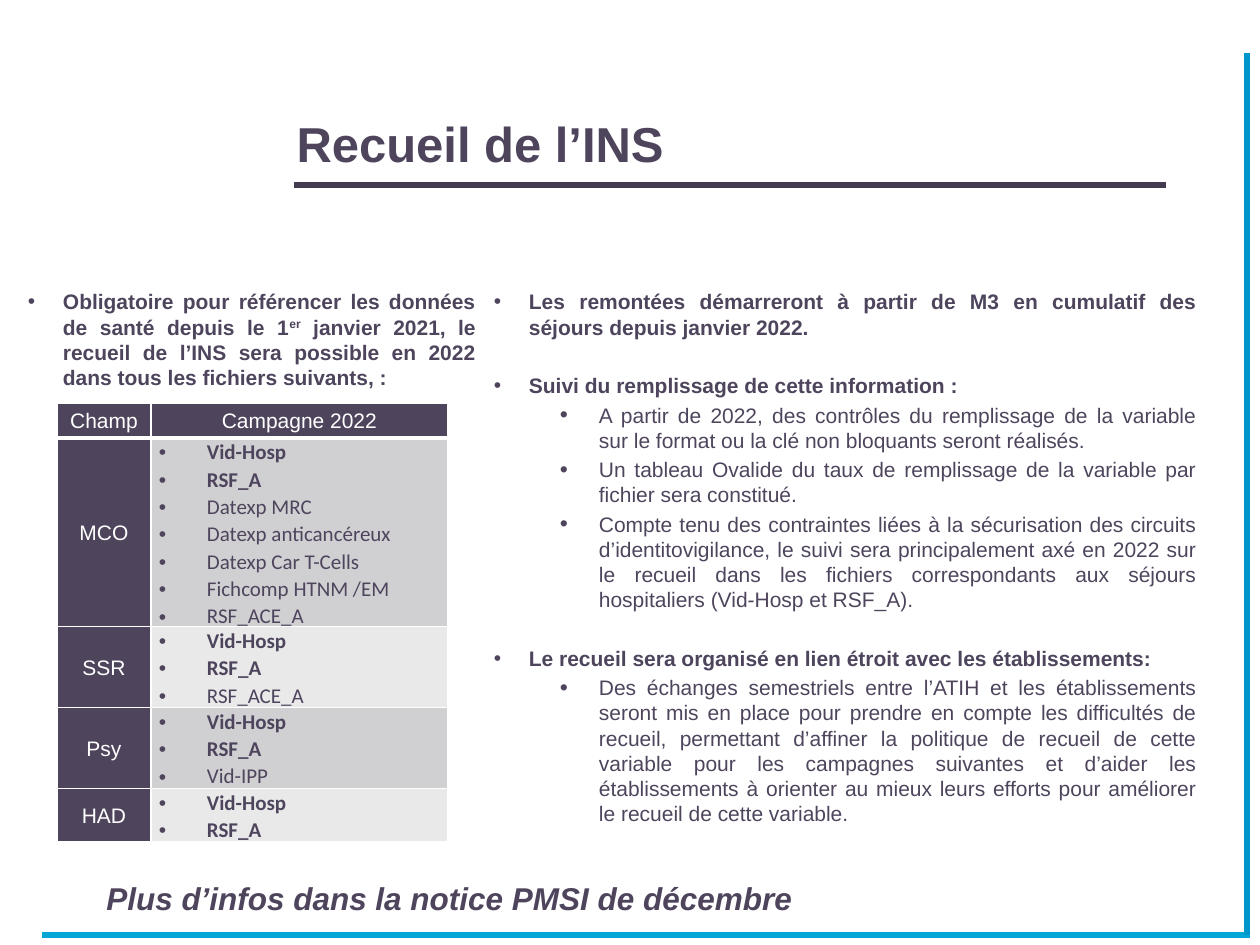
from lxml import etree
from pptx import Presentation
from pptx.dml.color import RGBColor
from pptx.enum.shapes import MSO_CONNECTOR
from pptx.enum.text import MSO_ANCHOR, MSO_AUTO_SIZE, PP_ALIGN
from pptx.oxml.ns import qn
from pptx.util import Emu, Pt

STRAIGHT = MSO_CONNECTOR.STRAIGHT
MIDDLE, BOTTOM = MSO_ANCHOR.MIDDLE, MSO_ANCHOR.BOTTOM
FIT_SHAPE = MSO_AUTO_SIZE.SHAPE_TO_FIT_TEXT
LEFT, CENTER, JUSTIFY = PP_ALIGN.LEFT, PP_ALIGN.CENTER, PP_ALIGN.JUSTIFY
TITLE_ONLY = 5
COLORS = {
    "ink": "4E455D", "rule": "453B50", "cyan": "02A7D5", "blue": "0095CB",
    "white": "FFFFFF", "band": "D0CFD2", "pale": "E9E9EA",
}
FILES_BY_FIELD = [
    ("MCO", 164, ["Datexp MRC", "Datexp anticancéreux", "Datexp Car T-Cells",
                  "Fichcomp HTNM /EM", "RSF_ACE_A"]),
    ("SSR", 73, ["RSF_ACE_A"]),
    ("Psy", 73, ["Vid-IPP"]),
    ("HAD", 45, []),
]
COMMON_FILES = ["Vid-Hosp", "RSF_A"]
OBLIGATION = [
    "Obligatoire pour référencer les données de santé depuis le 1", "er",
    " janvier 2021, le recueil de l’INS sera possible en 2022 dans tous les fichiers suivants, :",
]
SECTIONS = [
    ("Les remontées démarreront à partir de M3 en cumulatif des séjours depuis janvier 2022.", []),
    ("Suivi du remplissage de cette information :", [
        "A partir de 2022, des contrôles du remplissage de la variable sur le format ou la clé "
        "non bloquants seront réalisés.",
        "Un tableau Ovalide du taux de remplissage de la variable par fichier sera constitué.",
        "Compte tenu des contraintes liées à la sécurisation des circuits d’identitovigilance, "
        "le suivi sera principalement axé en 2022 sur le recueil dans les fichiers "
        "correspondants aux séjours hospitaliers (Vid-Hosp et RSF_A).",
    ]),
    ("Le recueil sera organisé en lien étroit avec les établissements:", [
        "Des échanges semestriels entre l’ATIH et les établissements seront mis en place pour "
        "prendre en compte les difficultés de recueil, permettant d’affiner la politique de "
        "recueil de cette variable pour les campagnes suivantes et d’aider les établissements "
        "à orienter au mieux leurs efforts pour améliorer le recueil de cette variable.",
    ]),
]


def px(length):
    """Turn pixels at 126 to the inch into EMU."""
    return Emu(round(length * 914400 / 126))


def format_runs(paragraph, size=12, color="ink", bold=False, italic=False, name="Arial"):
    """Give every run of a paragraph the same font."""
    for run in paragraph.runs:
        font = run.font
        font.name, font.size, font.bold, font.italic = name, Pt(size), bold, italic
        font.color.rgb = RGBColor.from_string(COLORS[color])


def add_bullet(paragraph, margin, hanging, percent=100):
    """Put a round bullet before a paragraph with a hanging indent."""
    properties = paragraph._p.get_or_add_pPr()
    properties.set("marL", str(px(margin)))
    properties.set("indent", str(-px(hanging)))
    for tag, key, value in (("a:buSzPct", "val", str(percent * 1000)),
                            ("a:buFont", "typeface", "Arial"),
                            ("a:buChar", "char", "•")):
        etree.SubElement(properties, qn(tag)).set(key, value)


def add_rule(slide, start, end, color):
    """Draw a straight line between two points."""
    line = slide.shapes.add_connector(STRAIGHT, *map(px, start + end))
    line.line.color.rgb = RGBColor.from_string(COLORS[color])
    line.line.width = Pt(3.06)
    etree.SubElement(line._element.spPr, qn("a:effectLst"))


def add_text_column(slide, box):
    """Add a wrapping text box with narrow insets and return its text frame."""
    frame = slide.shapes.add_textbox(*map(px, box)).text_frame
    frame.word_wrap = True
    frame.margin_left = frame.margin_right = px(9)
    frame.margin_top = frame.margin_bottom = px(5)
    return frame


def add_title(slide, box):
    """Place and format the title placeholder."""
    title = slide.shapes.title
    title.left, title.top, title.width, title.height = map(px, box)
    frame = title.text_frame
    frame.text = "Recueil de l’INS"
    frame.vertical_anchor = BOTTOM
    frame.paragraphs[0].alignment = LEFT
    format_runs(frame.paragraphs[0], size=28, bold=True)


def add_obligation(slide, box):
    """Write the introduction above the table, with its superscript."""
    paragraph = add_text_column(slide, box).paragraphs[0]
    paragraph.alignment = JUSTIFY
    add_bullet(paragraph, 35, 35)
    for text in OBLIGATION:
        paragraph.add_run().text = text
    format_runs(paragraph, bold=True)
    paragraph.runs[1]._r.get_or_add_rPr().set("baseline", "30000")


def add_sections(slide, box):
    """Write the bold points and their details."""
    frame = add_text_column(slide, box)
    for index, (heading, details) in enumerate(SECTIONS):
        for level, text in [(0, heading)] + [(1, detail) for detail in details]:
            first = index == 0 and level == 0
            paragraph = frame.paragraphs[0] if first else frame.add_paragraph()
            paragraph.text = text
            paragraph.level = level
            paragraph.alignment = JUSTIFY
            if level:
                add_bullet(paragraph, 105, 39, 110)
            else:
                add_bullet(paragraph, 35, 35)
            if not first:
                paragraph.space_before = Pt(2.4 if level else 19)
            format_runs(paragraph, bold=level == 0)


def style_cell(cell, fill, bottom=1):
    """Set the borders, fill and insets of a table cell."""
    properties = cell._tc.get_or_add_tcPr()
    for side, width in (("L", 1), ("R", 1), ("T", 1), ("B", bottom)):
        border = etree.SubElement(properties, qn(f"a:ln{side}"), w=str(Pt(width)))
        solid = etree.SubElement(border, qn("a:solidFill"))
        etree.SubElement(solid, qn("a:srgbClr")).set("val", COLORS["white"])
    cell.fill.solid()
    cell.fill.fore_color.rgb = RGBColor.from_string(COLORS[fill])
    cell.vertical_anchor = MIDDLE
    cell.margin_left = cell.margin_right = px(8)
    cell.margin_top = cell.margin_bottom = 0


def fill_label(cell, text, bottom=1):
    """Write a white centred label in a dark cell."""
    style_cell(cell, "ink", bottom)
    paragraph = cell.text_frame.paragraphs[0]
    paragraph.text = text
    paragraph.alignment = CENTER
    paragraph.line_spacing = 1.07
    format_runs(paragraph, color="white")


def fill_files(cell, files, fill):
    """List files in a cell, the common ones in bold."""
    style_cell(cell, fill)
    cell.text_frame.text = "\n".join(files)
    for paragraph in cell.text_frame.paragraphs:
        paragraph.line_spacing = 1.07
        add_bullet(paragraph, 48, 48)
        format_runs(paragraph, bold=paragraph.text in COMMON_FILES, name="Calibri")


def add_files_table(slide, box):
    """Build the table of files by field."""
    table = slide.shapes.add_table(len(FILES_BY_FIELD) + 1, 2, *map(px, box)).table
    table.first_row = table.horz_banding = False
    table.columns[0].width, table.columns[1].width = px(94), px(box[2] - 94)
    table.rows[0].height = px(35)
    for column, text in enumerate(("Champ", "Campagne 2022")):
        fill_label(table.cell(0, column), text, bottom=3)
    for row, (field, height, files) in enumerate(FILES_BY_FIELD, 1):
        table.rows[row].height = px(height)
        fill_label(table.cell(row, 0), field)
        fill_files(table.cell(row, 1), COMMON_FILES + files, "band" if row % 2 else "pale")


def add_footnote(slide, box):
    """Write the closing remark on one line."""
    frame = slide.shapes.add_textbox(*map(px, box)).text_frame
    frame.word_wrap = False
    frame.auto_size = FIT_SHAPE
    frame.text = "Plus d’infos dans la notice PMSI de décembre"
    format_runs(frame.paragraphs[0], size=18, bold=True, italic=True)


def main():
    """Build the slide and save it."""
    presentation = Presentation()
    presentation.slide_width, presentation.slide_height = px(1260), px(945)
    slide = presentation.slides.add_slide(presentation.slide_layouts[TITLE_ONLY])
    add_rule(slide, (294, 185), (1166, 185), "rule")
    add_rule(slide, (42, 935), (1250, 935), "cyan")
    add_rule(slide, (1247, 935), (1247, 53), "blue")
    add_obligation(slide, (19, 284, 466, 583))
    add_title(slide, (284, 42, 840, 137))
    add_files_table(slide, (57, 403, 391, 390))
    add_footnote(slide, (94, 873, 718, 50))
    add_sections(slide, (485, 284, 721, 572))
    presentation.save("out.pptx")


if __name__ == "__main__":
    main()
